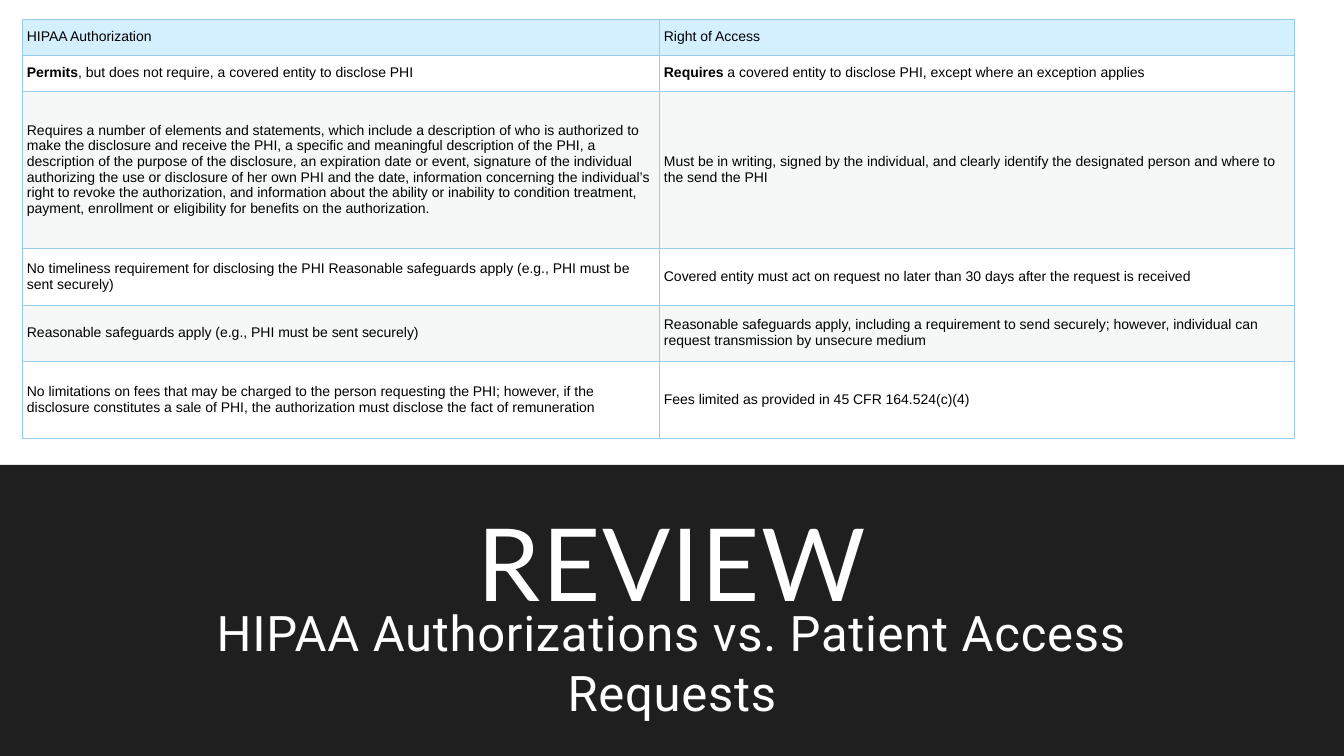
import pptx
import pptx.util
import pptx.dml.color
import pptx.enum.shapes
import pptx.enum.text
import pptx.oxml
import pptx.oxml.ns

COLORS = {
    "band": "000000",
    "heading": "FFFFFF",
    "body": "000000",
    "header_row": "D4EFFD",
    "shaded_row": "F6F7F7",
    "border": "97CDEB",
}

COMPARISON = [
    (["HIPAA Authorization"], ["Right of Access"]),
    (
        ["Permits", ", but does not require, a covered entity to disclose PHI"],
        ["Requires", " a covered entity to disclose PHI, except where an exception applies"],
    ),
    (
        ["Requires a number of elements and statements, which include a description of who is "
         "authorized to make the disclosure and receive the PHI, a specific and meaningful "
         "description of the PHI, a description of the purpose of the disclosure, an expiration "
         "date or event, signature of the individual authorizing the use or disclosure of her own "
         "PHI and the date, information concerning the individual’s right to revoke the "
         "authorization, and information about the ability or inability to condition treatment, "
         "payment, enrollment or eligibility for benefits on the authorization."],
        ["Must be in writing, signed by the individual, and clearly identify the designated person "
         "and where to the send the PHI"],
    ),
    (
        ["No timeliness requirement for disclosing the PHI Reasonable safeguards apply (e.g., PHI "
         "must be sent securely)"],
        ["Covered entity must act on request no later than 30 days after the request is received"],
    ),
    (
        ["Reasonable safeguards apply (e.g., PHI must be sent securely)"],
        ["Reasonable safeguards apply, including a requirement to send securely; however, "
         "individual can request transmission by unsecure medium"],
    ),
    (
        ["No limitations on fees that may be charged to the person requesting the PHI; however, if "
         "the disclosure constitutes a sale of PHI, the authorization must disclose the fact of "
         "remuneration"],
        ["Fees limited as provided in 45 CFR 164.524(c)(4)"],
    ),
]
ROW_FILLS = ["header_row", None, "shaded_row", None, "shaded_row", None]
ROW_HEIGHTS = [36, 36, 157, 57, 56, 77]
COLUMN_WIDTHS = [637, 636]
HEADINGS = [
    ("REVIEW", (106, 504, 1132, 129), "Lato", 72, 0.9, 120),
    ("HIPAA Authorizations vs. Patient Access Requests", (106, 633, 1132, 57), "Roboto", 35, 1.01, 50),
]
SLIDE_WIDTH, SLIDE_HEIGHT, BAND_TOP = 1344, 756, 465
TABLE_LEFT, TABLE_TOP, CELL_INSET = 22, 19, 5
EMU_PER_PX = 914400 / 100.8


def px(length):
    return pptx.util.Emu(round(length * EMU_PER_PX))


def color(name):
    return pptx.dml.color.RGBColor.from_string(COLORS[name])


def add_run(paragraph, text, font_name, size, color_name, bold=False):
    run = paragraph.add_run()
    run.text = text
    run.font.name = font_name
    run.font.size = pptx.util.Pt(size)
    run.font.bold = bold
    run.font.color.rgb = color(color_name)
    return run


def add_band(slide):
    band = slide.shapes.add_shape(
        pptx.enum.shapes.MSO_SHAPE.RECTANGLE,
        0, px(BAND_TOP), px(SLIDE_WIDTH), px(SLIDE_HEIGHT - BAND_TOP))
    band.shadow.inherit = False
    band.line.fill.background()
    band.fill.solid()
    band.fill.fore_color.rgb = color("band")
    tint = band.fill._xPr.find(".//" + pptx.oxml.ns.qn("a:srgbClr"))
    tint.append(pptx.oxml.parse_xml(
        f'<a:alpha {pptx.oxml.ns.nsdecls("a")} val="88000"/>'))


def add_heading(slide, text, box, font_name, size, line_spacing, tracking):
    frame = slide.shapes.add_textbox(*map(px, box)).text_frame
    frame.word_wrap = True
    frame.auto_size = pptx.enum.text.MSO_AUTO_SIZE.NONE
    frame.vertical_anchor = pptx.enum.text.MSO_ANCHOR.MIDDLE
    paragraph = frame.paragraphs[0]
    paragraph.alignment = pptx.enum.text.PP_ALIGN.CENTER
    paragraph.line_spacing = line_spacing
    run = add_run(paragraph, text, font_name, size, "heading")
    run.font._element.set("spc", str(tracking))


def add_borders(cell):
    properties = cell._tc.get_or_add_tcPr()
    for position, side in enumerate(("lnL", "lnR", "lnT", "lnB")):
        properties.insert(position, pptx.oxml.parse_xml(
            f'<a:{side} {pptx.oxml.ns.nsdecls("a")} w="9525"><a:solidFill>'
            f'<a:srgbClr val="{COLORS["border"]}"/></a:solidFill></a:{side}>'))


def fill_cell(cell, texts, fill_name):
    cell.vertical_anchor = pptx.enum.text.MSO_ANCHOR.MIDDLE
    cell.margin_left = cell.margin_right = px(CELL_INSET)
    cell.margin_top = cell.margin_bottom = px(CELL_INSET)
    if fill_name:
        cell.fill.solid()
        cell.fill.fore_color.rgb = color(fill_name)
    else:
        cell.fill.background()
    add_borders(cell)
    for index, text in enumerate(texts):
        is_lead = len(texts) > 1 and index == 0
        add_run(cell.text_frame.paragraphs[0], text, "Arial", 10, "body", is_lead)


def add_comparison(slide):
    table = slide.shapes.add_table(
        len(ROW_HEIGHTS), len(COLUMN_WIDTHS), px(TABLE_LEFT), px(TABLE_TOP),
        px(sum(COLUMN_WIDTHS)), px(sum(ROW_HEIGHTS))).table
    table.horz_banding = False
    for column, width in zip(table.columns, COLUMN_WIDTHS):
        column.width = px(width)
    for row, height, entries, fill_name in zip(table.rows, ROW_HEIGHTS, COMPARISON, ROW_FILLS):
        row.height = px(height)
        for cell, texts in zip(row.cells, entries):
            fill_cell(cell, texts, fill_name)


def main():
    deck = pptx.Presentation()
    deck.slide_width, deck.slide_height = px(SLIDE_WIDTH), px(SLIDE_HEIGHT)
    slide = deck.slides.add_slide(deck.slide_layouts[6])
    add_band(slide)
    for heading in HEADINGS:
        add_heading(slide, *heading)
    add_comparison(slide)
    deck.save("out.pptx")


if __name__ == "__main__":
    main()
